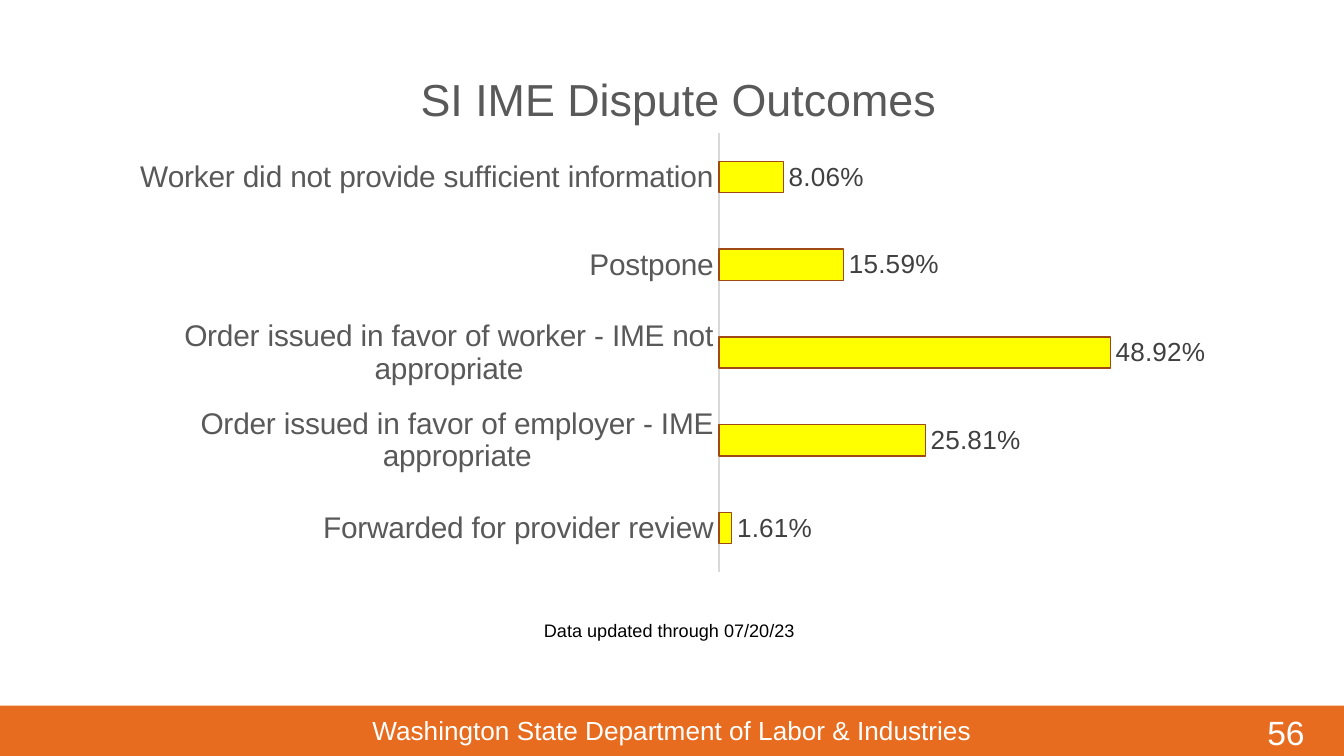
import pptx
import pptx.util
import pptx.chart.data
import pptx.dml.color
import pptx.enum.chart
import pptx.enum.shapes
import pptx.enum.text
import pptx.oxml

Pt = pptx.util.Pt
Align = pptx.enum.text.PP_ALIGN
Anchor = pptx.enum.text.MSO_ANCHOR

# Content
TITLE = "SI IME Dispute Outcomes"
OUTCOMES = [
    ("Forwarded for provider review", 0.0161),
    ("Order issued in favor of employer - IME appropriate", 0.2581),
    ("Order issued in favor of worker - IME not appropriate", 0.4892),
    ("Postpone", 0.1559),
    ("Worker did not provide sufficient information", 0.0806),
]
NOTE = "Data updated through 07/20/23"
FOOTER = "Washington State Department of Labor & Industries"
PAGE_NUMBER = "56"

THEME = {
    "font": "Arial",
    "colors": {
        "band": "E86C1F", "band_text": "FFFFFF", "note": "000000",
        "chart_text": "595959", "label": "404040", "axis": "D9D9D9",
        "bar": "FFFF00", "bar_line": "9F4A14",
    },
    "sizes": {"title": 24, "category": 16, "label": 14,
              "note": 9.7, "footer": 14, "page": 18},
}

# Geometry in points: left, top, width, height
SLIDE_WIDTH, SLIDE_HEIGHT = 720, 405
BAND_TOP = 378
CHART_BOX = (63.36, 21.6, 590.4, 290.88)
PLOT_BOX = (385.2, 71.3, 257.1, 235.2)
TITLE_POINT = (221, 33.5)
PERCENT = "0.00%"


def color(name):
    return pptx.dml.color.RGBColor.from_string(THEME["colors"][name])


def set_values(target, values):
    for name, value in values.items():
        setattr(target, name, value)


def style_font(font, size, color_name):
    set_values(font, {"name": THEME["font"], "bold": False,
                      "size": Pt(THEME["sizes"][size])})
    font.color.rgb = color(color_name)


def style_line(line, color_name):
    line.color.rgb = color(color_name)
    line.width = Pt(0.75)


def add_text(slide, text, box, size, color_name, align=Align.LEFT, **frame_format):
    frame = slide.shapes.add_textbox(*map(Pt, box)).text_frame
    set_values(frame, {"word_wrap": True, **frame_format})
    paragraph = frame.paragraphs[0]
    set_values(paragraph, {"text": text, "alignment": align})
    style_font(paragraph.font, size, color_name)


def place_in_chart(element, index, box, inner=False):
    """Give a chart part a manual layout, as fractions of the chart box."""
    left, top, width, height = CHART_BOX
    fractions = [(box[0] - left) / width, (box[1] - top) / height]
    fractions += [length / whole for length, whole in zip(box[2:], (width, height))]
    target = '<c:layoutTarget val="inner"/>' if inner else ""
    modes = '<c:xMode val="edge"/><c:yMode val="edge"/>'
    values = "".join(f'<c:{name} val="{value:.4f}"/>'
                     for name, value in zip("xywh", fractions))
    namespace = "http://schemas.openxmlformats.org/drawingml/2006/chart"
    for layout in element.findall(f"{{{namespace}}}layout"):
        element.remove(layout)
    element.insert(index, pptx.oxml.parse_xml(
        f'<c:layout xmlns:c="{namespace}"><c:manualLayout>'
        f"{target}{modes}{values}</c:manualLayout></c:layout>"))


def add_outcome_chart(slide):
    data = pptx.chart.data.CategoryChartData(number_format=PERCENT)
    data.categories = [name for name, _ in OUTCOMES]
    data.add_series("Series 1", [share for _, share in OUTCOMES])
    chart = slide.shapes.add_chart(
        pptx.enum.chart.XL_CHART_TYPE.BAR_CLUSTERED, *map(Pt, CHART_BOX), data).chart
    chart.has_legend = False
    chart.font.name = THEME["font"]
    chart.font.size = Pt(10)

    # Title
    chart.has_title = True
    paragraph = chart.chart_title.text_frame.paragraphs[0]
    paragraph.text = TITLE
    style_font(paragraph.runs[0].font, "title", "chart_text")
    place_in_chart(chart.chart_title._element, 1, TITLE_POINT)

    # Axes
    no_ticks = pptx.enum.chart.XL_TICK_MARK.NONE
    categories, values = chart.category_axis, chart.value_axis
    set_values(categories, {"major_tick_mark": no_ticks, "minor_tick_mark": no_ticks,
                            "has_major_gridlines": False})
    style_font(categories.tick_labels.font, "category", "chart_text")
    style_line(categories.format.line, "axis")
    set_values(values, {"visible": False, "has_major_gridlines": False,
                        "minimum_scale": 0, "maximum_scale": 0.6})

    # Bars and their labels
    plot = chart.plots[0]
    set_values(plot, {"gap_width": 182, "vary_by_categories": False,
                      "has_data_labels": True})
    bars = plot.series[0].format
    bars.fill.solid()
    bars.fill.fore_color.rgb = color("bar")
    style_line(bars.line, "bar_line")
    set_values(plot.data_labels, {
        "show_value": True, "number_format": PERCENT, "number_format_is_linked": False,
        "position": pptx.enum.chart.XL_LABEL_POSITION.OUTSIDE_END})
    style_font(plot.data_labels.font, "label", "label")
    place_in_chart(plot._element.getparent(), 0, PLOT_BOX, inner=True)


def add_footer(slide):
    band = slide.shapes.add_shape(
        pptx.enum.shapes.MSO_SHAPE.RECTANGLE, 0, Pt(BAND_TOP),
        Pt(SLIDE_WIDTH), Pt(SLIDE_HEIGHT - BAND_TOP))
    band.shadow.inherit = False
    band.fill.solid()
    band.fill.fore_color.rgb = color("band")
    band.line.fill.background()
    add_text(slide, PAGE_NUMBER, (671.8, BAND_TOP, 41.8, 31.5), "page", "band_text")
    add_text(slide, FOOTER, (0, 379.4, SLIDE_WIDTH, 24), "footer", "band_text",
             Align.CENTER)


def main():
    presentation = pptx.Presentation()
    set_values(presentation, {"slide_width": Pt(SLIDE_WIDTH),
                              "slide_height": Pt(SLIDE_HEIGHT)})
    slide = presentation.slides.add_slide(presentation.slide_layouts[6])  # blank
    add_footer(slide)
    add_outcome_chart(slide)
    add_text(slide, NOTE, (68.4, 316.8, 521.3, 28.8), "note", "note",
             margin_left=Pt(223), margin_bottom=Pt(2), vertical_anchor=Anchor.BOTTOM)
    presentation.save("out.pptx")


if __name__ == "__main__":
    main()
